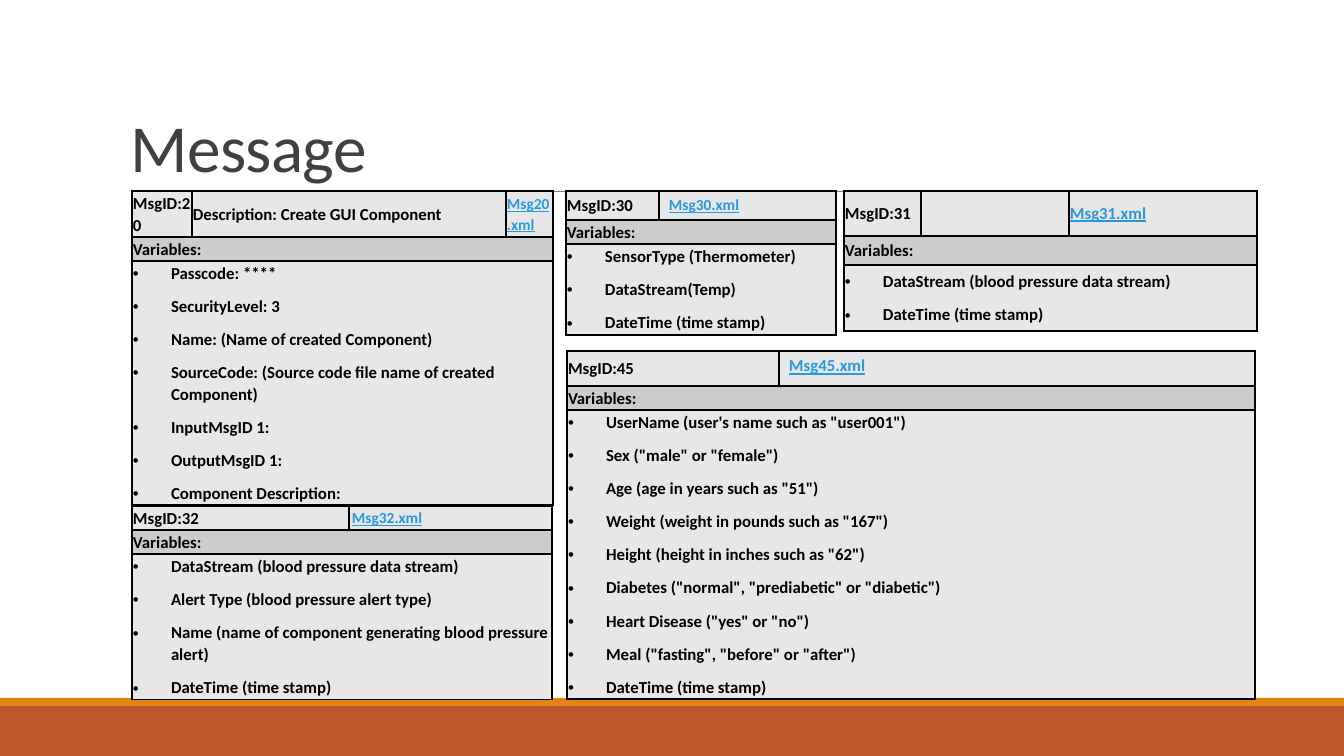
import pptx
import pptx.dml.color
import pptx.enum.shapes
import pptx.enum.text
import pptx.oxml
import pptx.oxml.ns
import pptx.util

ANCHOR = pptx.enum.text.MSO_ANCHOR


def px(n):
    return pptx.util.Emu(round(n * 12192000 / 1344))


def rgb(value):
    return pptx.dml.color.RGBColor.from_string(value)


def add_xml(parent, xml):
    ns = pptx.oxml.ns.nsdecls("a")
    parent.append(pptx.oxml.parse_xml(xml.replace(" ", f" {ns} ", 1)))


class MessageSlide:
    font = "Calibri"
    black = "000000"
    link = "2998E3"
    light = "E7E7E7"
    band = "CCCCCC"

    def __init__(self, prs):
        self.s = prs.slides.add_slide(prs.slide_layouts[6])

    def bar(self, x, y, w, h, color):
        sp = self.s.shapes.add_shape(
            pptx.enum.shapes.MSO_SHAPE.RECTANGLE, px(x), px(y), px(w), px(h))
        sp.shadow.inherit = False
        sp.fill.solid()
        sp.fill.fore_color.rgb = rgb(color)
        sp.line.fill.background()

    def rule(self, x1, x2, y, color):
        cn = self.s.shapes.add_connector(
            pptx.enum.shapes.MSO_CONNECTOR.STRAIGHT, px(x1), px(y), px(x2), px(y))
        cn.line.color.rgb = rgb(color)
        cn.line.width = pptx.util.Pt(0.5)
        add_xml(cn._element.spPr, "<a:effectLst />")

    def run(self, p, text, size, color, bold=True, underline=False):
        r = p.add_run()
        r.text = text
        r.font.name = self.font
        r.font.size = pptx.util.Pt(size)
        r.font.bold = bold
        r.font.underline = underline
        r.font.color.rgb = rgb(color)
        return r

    def title(self, x, y, w, h, text):
        tf = self.s.shapes.add_textbox(px(x), px(y), px(w), px(h)).text_frame
        tf.word_wrap = True
        tf.vertical_anchor = ANCHOR.BOTTOM
        p = tf.paragraphs[0]
        p.line_spacing = 0.85
        r = self.run(p, text, 48, "404040", bold=False)
        r.font._element.set("spc", "-50")

    def cell(self, cell, fill):
        tc_pr = cell._tc.get_or_add_tcPr()
        for side in "LRTB":
            add_xml(tc_pr, f'<a:ln{side} w="12700"><a:solidFill>'
                    f'<a:srgbClr val="{self.black}"/></a:solidFill></a:ln{side}>')
        cell.fill.solid()
        cell.fill.fore_color.rgb = rgb(fill)

    def inset(self, cell, left=1, top=1, anchor=ANCHOR.MIDDLE):
        cell.margin_left = cell.margin_right = px(left)
        cell.margin_top = cell.margin_bottom = px(top)
        cell.vertical_anchor = anchor

    def label(self, cell, text):
        self.inset(cell)
        p = cell.text_frame.paragraphs[0]
        p.line_spacing = 1.07
        self.run(p, text, 12, self.black)

    def file_name(self, cell, text, size, spacing=1.0, **inset):
        self.inset(cell, **inset)
        p = cell.text_frame.paragraphs[0]
        p.line_spacing = spacing
        self.run(p, text, size, self.link, underline=True)

    def bullets(self, cell, items):
        self.inset(cell)
        tf = cell.text_frame
        for i, item in enumerate(items):
            p = tf.add_paragraph() if i else tf.paragraphs[0]
            p.line_spacing = 1.07
            p.space_after = pptx.util.Pt(8)
            p_pr = p._p.get_or_add_pPr()
            p_pr.set("marL", str(px(38)))
            p_pr.set("indent", str(-px(38)))
            add_xml(p_pr, '<a:buFont typeface="Arial"/>')
            add_xml(p_pr, '<a:buChar char="•"/>')
            self.run(p, item, 12, self.black)

    def message(self, number, x, y, cols, rows, items, name, description=""):
        frame = self.s.shapes.add_table(
            3, len(cols), px(x), px(y), px(sum(cols)), px(sum(rows)))
        table = frame.table
        table.first_row = table.horz_banding = False
        for column, w in zip(table.columns, cols):
            column.width = px(w)
        for row, h, fill in zip(table.rows, rows, (self.light, self.band, self.light)):
            row.height = px(h)
            for cell in row.cells:
                self.cell(cell, fill)
        last = len(cols) - 1
        for i in (1, 2):
            table.cell(i, 0).merge(table.cell(i, last))
        self.label(table.cell(0, 0), f"MsgID:{number}")
        if description:
            self.label(table.cell(0, 1), description)
        self.file_name(table.cell(0, last), f"Msg{number}.xml", **name)
        self.label(table.cell(1, 0), "Variables:")
        self.bullets(table.cell(2, 0), items)


def main():
    prs = pptx.Presentation()
    prs.slide_width, prs.slide_height = px(1344), px(756)
    s = MessageSlide(prs)
    s.bar(0, 706, 1344, 50, "BD582C")
    s.bar(0, 698, 1344, 8, "E48312")
    s.rule(132, 1231, 191, "808080")
    s.title(121, 31, 1109, 160, "Message")

    stream = "DataStream (blood pressure data stream)"
    stamp = "DateTime (time stamp)"
    padded = {"left": 10, "top": 5, "anchor": ANCHOR.TOP}

    s.message(20, 132, 191, (60, 314, 47), (46, 24, 244), (
        "Passcode: ****",
        "SecurityLevel: 3",
        "Name: (Name of created Component)",
        "SourceCode: (Source code file name of created Component)",
        "InputMsgID 1:",
        "OutputMsgID 1:",
        "Component Description:",
    ), {"size": 11, "spacing": 1.07}, "Description: Create GUI Component")
    s.message(32, 132, 506, (217, 203), (24, 24, 146), (
        stream,
        "Alert Type (blood pressure alert type)",
        "Name (name of component generating blood pressure alert)",
        stamp,
    ), {"size": 11, "spacing": 1.07, "left": 3, "top": 0})
    s.message(31, 844, 191, (77, 148, 188), (45, 29, 66), (stream, stamp),
              {"size": 12})
    s.message(30, 566, 191, (93, 177), (29, 24, 91), (
        "SensorType (Thermometer)",
        "DataStream(Temp)",
        stamp,
    ), {"size": 11, **padded})
    s.message(45, 567, 351, (212, 476), (35, 24, 289), (
        'UserName (user\'s name such as "user001")',
        'Sex ("male" or "female")',
        'Age (age in years such as "51")',
        'Weight (weight in pounds such as "167")',
        'Height (height in inches such as "62")',
        'Diabetes ("normal", "prediabetic" or "diabetic")',
        'Heart Disease ("yes" or "no")',
        'Meal ("fasting", "before" or "after")',
        stamp,
    ), {"size": 12, **padded})
    prs.save("out.pptx")


if __name__ == "__main__":
    main()
